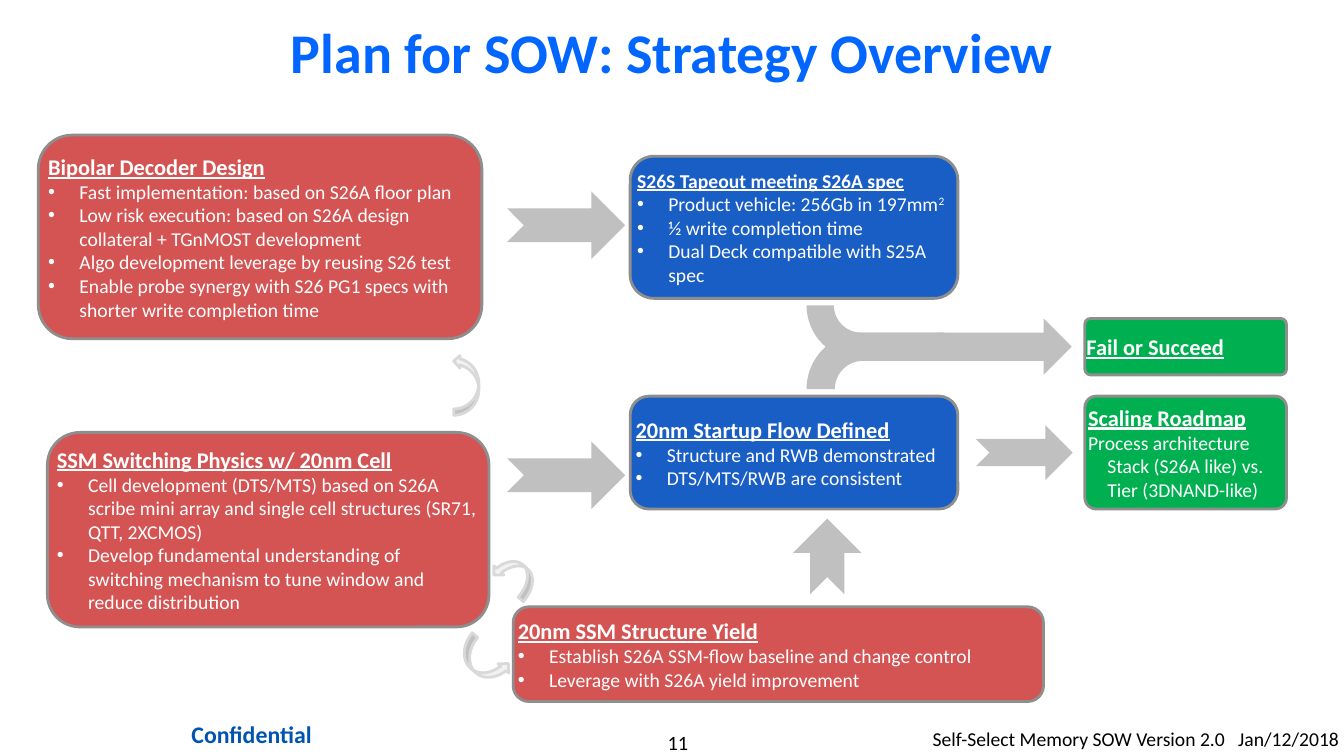
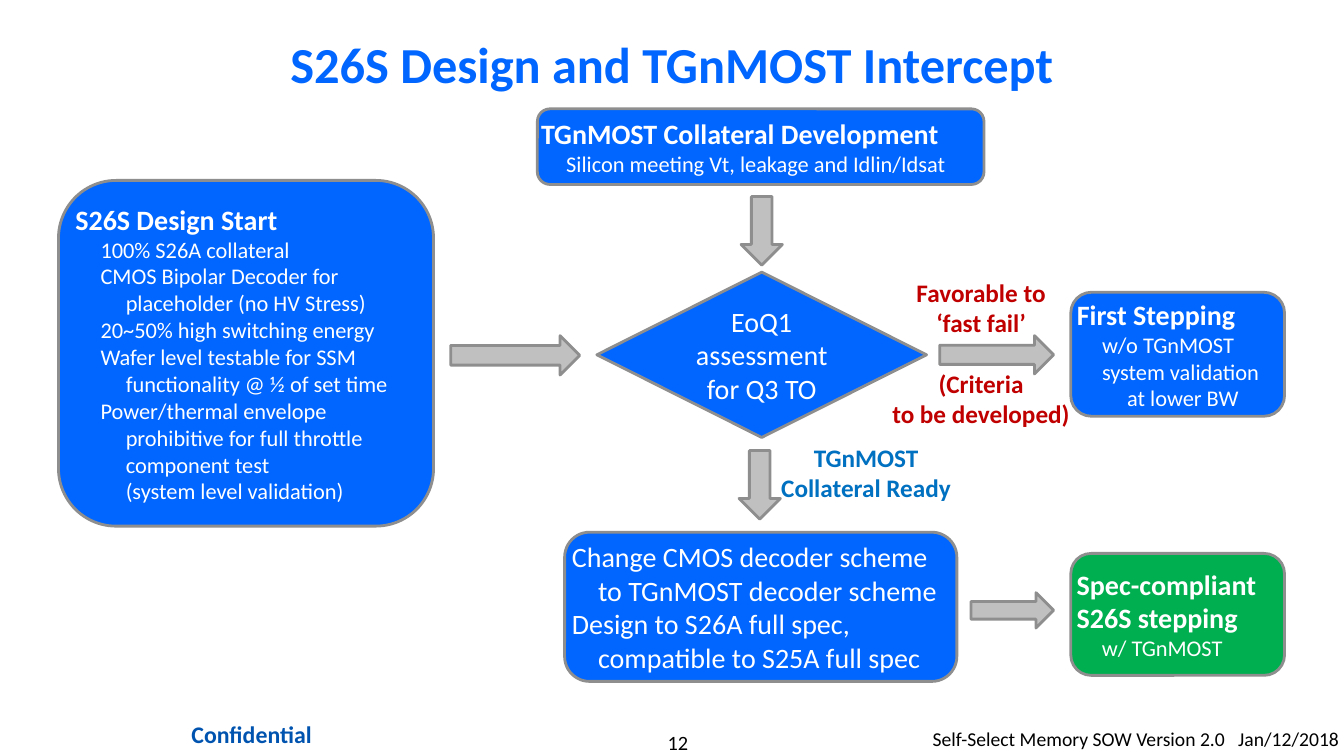
import dataclasses

import lxml.etree
import pptx
import pptx.dml.color
import pptx.enum.shapes
import pptx.enum.text
import pptx.oxml.ns
import pptx.util

Inches = pptx.util.Inches
Pt = pptx.util.Pt
qn = pptx.oxml.ns.qn
SHAPE = pptx.enum.shapes.MSO_SHAPE
ALIGN = pptx.enum.text.PP_ALIGN
ANCHOR = pptx.enum.text.MSO_ANCHOR

FONT = "Calibri"
COLORS = {
    "white": "FFFFFF",
    "black": "000000",
    "title": "0066FF",
    "confidential": "0054B0",
    "red": "C00000",
    "navy": "004DBF",
    "blue": "0066FF",
    "green": "00B050",
    "note": "0070C0",
    "outline": "8E8E8E",
    "arrow": "C0C0C0",
    "loop": "F2F2F2",
    "loop_outline": "D9D9D9",
}
OPACITY = {"red": 67, "navy": 90}
FOOTER = "Self-Select Memory SOW Version 2.0\u00a0\u00a0 Jan/12/2018".replace("\u00a0", " ")


@dataclasses.dataclass
class TextLine:
    text: str
    size: float = 14
    bold: bool = False
    underline: bool = False
    color: str = "white"
    align: object = ALIGN.LEFT
    left: float = 0
    hang: float = 0
    bullet: bool = False
    superscript: str = ""
    before: float = 0


def heading(text, size=16):
    return TextLine(text, size, bold=True, underline=True)


def bullet(text, superscript=""):
    return TextLine(text, left=0.31, hang=0.31, bullet=True, superscript=superscript)


def plain_heading(text):
    return TextLine(text, 20, bold=True)


def detail(text, hang=0.25):
    return TextLine(text, 16, left=0.25 + hang, hang=hang)


def label(text, color, before=0):
    return TextLine(text, 18, bold=True, color=color, align=ALIGN.CENTER, before=before)


def rgb(name):
    return pptx.dml.color.RGBColor.from_string(COLORS[name])


def write_paragraph(paragraph, line):
    paragraph.text = line.text
    paragraph.alignment = line.align
    if line.before:
        paragraph.space_before = Pt(line.before)
    if line.superscript:
        run = paragraph.add_run()
        run.text = line.superscript
        run.font._element.set("baseline", "30000")
    properties = paragraph._p.get_or_add_pPr()
    properties.set("marL", str(Inches(line.left)))
    properties.set("indent", str(-Inches(line.hang)))
    if line.bullet:
        lxml.etree.SubElement(properties, qn("a:buFont")).set("typeface", "Arial")
        lxml.etree.SubElement(properties, qn("a:buChar")).set("char", "•")
    font = paragraph.font
    font.name = FONT
    font.size = Pt(line.size)
    font.bold = line.bold
    font.underline = line.underline
    font.color.rgb = rgb(line.color)


def fill_text(shape, lines, anchor=ANCHOR.MIDDLE, insets=(0, 0), wrap=True):
    frame = shape.text_frame
    frame.word_wrap = wrap
    frame.vertical_anchor = anchor
    frame.margin_left = frame.margin_right = Inches(insets[0])
    frame.margin_top = frame.margin_bottom = Inches(insets[1])
    for index, line in enumerate(lines):
        paragraph = frame.add_paragraph() if index else frame.paragraphs[0]
        write_paragraph(paragraph, line)


def add_text(slide, place, lines, **layout):
    box = slide.shapes.add_textbox(*map(Inches, place))
    fill_text(box, lines, **layout)


def add_figure(slide, kind, place, fill, outline=None, adjustments=(), rotation=0, flip=""):
    shape = slide.shapes.add_shape(kind, *map(Inches, place))
    shape.shadow.inherit = False
    shape.fill.solid()
    shape.fill.fore_color.rgb = rgb(fill)
    if outline:
        shape.line.color.rgb = rgb(outline)
        shape.line.width = Pt(2)
    else:
        shape.line.fill.background()
    for index, value in enumerate(adjustments):
        shape.adjustments[index] = value
    shape.rotation = rotation
    for axis in flip:
        shape.element.spPr.find(qn("a:xfrm")).set("flip" + axis, "1")
    return shape


def add_box(slide, place, fill, lines, kind=SHAPE.ROUNDED_RECTANGLE, insets=(0, 0), adjustments=()):
    box = add_figure(slide, kind, place, fill, "outline", adjustments)
    if fill in OPACITY:
        color = box.element.spPr.find(qn("a:solidFill"))[0]
        lxml.etree.SubElement(color, qn("a:alpha")).set("val", str(OPACITY[fill] * 1000))
    fill_text(box, lines, insets=insets)


def add_slide(presentation, title, title_size, title_height, number):
    slide = presentation.slides.add_slide(presentation.slide_layouts[6])
    add_text(slide, (5.56, 7.24, 2.33, 0.24),
             [TextLine(number, 14.5, color="black", align=ALIGN.CENTER)], anchor=ANCHOR.TOP)
    add_text(slide, (1.55, 7.08, 1.89, 0.41),
             [TextLine("Confidential", 17, bold=True, color="confidential", align=ALIGN.CENTER)],
             anchor=ANCHOR.TOP, insets=(0.12, 0.06))
    add_text(slide, (9.25, 7.16, 4.08, 0.34), [TextLine(FOOTER, color="black")],
             anchor=ANCHOR.TOP, insets=(0, 0.05), wrap=False)
    add_text(slide, (1, 0.17, 11.33, title_height),
             [TextLine(title, title_size, bold=True, color="title", align=ALIGN.CENTER)],
             insets=(0.1, 0.05))
    return slide


def build_strategy(presentation):
    slide = add_slide(presentation, "Plan for SOW: Strategy Overview", 40, 0.67, "11")
    add_box(slide, (0.38, 1.34, 4.4, 2.02), "red", [
        heading("Bipolar Decoder Design"),
        bullet("Fast implementation: based on S26A floor plan"),
        bullet("Low risk execution: based on S26A design collateral + TGnMOST development"),
        bullet("Algo development leverage by reusing S26 test"),
        bullet("Enable probe synergy with S26 PG1 specs with shorter write completion time"),
    ])
    add_box(slide, (0.47, 4.29, 4.38, 1.93), "red", [
        heading("SSM Switching Physics w/ 20nm Cell"),
        bullet("Cell development (DTS/MTS) based on S26A scribe mini array and single cell "
               "structures (SR71, QTT, 2XCMOS)"),
        bullet("Develop fundamental understanding of switching mechanism to tune window and "
               "reduce distribution"),
    ])
    add_box(slide, (5.09, 6.02, 5.26, 0.94), "red", [
        heading("20nm SSM Structure Yield"),
        bullet("Establish S26A SSM-flow baseline and change control"),
        bullet("Leverage with S26A yield improvement"),
    ])
    add_box(slide, (6.25, 3.93, 3.25, 1.12), "navy", [
        heading("20nm Startup Flow Defined"),
        bullet("Structure and RWB demonstrated"),
        bullet("DTS/MTS/RWB are consistent"),
    ])
    add_box(slide, (6.25, 1.55, 3.25, 1.41), "navy", [
        heading("S26S Tapeout meeting S26A spec", 14),
        bullet("Product vehicle: 256Gb in 197mm", superscript="2"),
        bullet("½ write completion time"),
        bullet("Dual Deck compatible with S25A spec"),
    ])
    add_box(slide, (10.76, 3.16, 2, 0.56), "green", [heading("Fail or Succeed")],
            adjustments=[0.1])
    add_box(slide, (10.76, 3.93, 2, 1.12), "green", [
        heading("Scaling Roadmap"),
        TextLine("Process architecture\nStack (S26A like) vs.\nTier (3DNAND-like)",
                 left=0.19, hang=0.19),
    ], adjustments=[0.1])

    for place, rotation in [
        ((5.03, 4.38, 1.17, 0.67), 0),
        ((5.03, 1.9, 1.17, 0.67), 0),
        ((7.83, 5.18, 0.75, 0.68), 270),
        ((9.3, 3.16, 1.33, 0.56), 0),
        ((9.68, 4.22, 0.96, 0.54), 0),
    ]:
        add_figure(slide, SHAPE.NOTCHED_RIGHT_ARROW, place, "arrow", rotation=rotation)
    for place, flip in [((8, 3.3, 1.5, 0.56), ""), ((8, 3.03, 1.5, 0.54), "V")]:
        add_figure(slide, SHAPE.BENT_ARROW, place, "arrow",
                   adjustments=(0.5, 0.25, 0.25, 1), flip=flip)
    for kind, place, rotation, flip in [
        (SHAPE.CURVED_UP_ARROW, (4.53, 6.42, 0.54, 0.28), 40.4, ""),
        (SHAPE.CURVED_UP_ARROW, (4.88, 5.58, 0.46, 0.27), 42.2, "HV"),
        (SHAPE.CURVED_RIGHT_ARROW, (4.5, 3.52, 0.25, 0.6), 0, "HV"),
    ]:
        add_figure(slide, kind, place, "loop", "loop_outline", rotation=rotation, flip=flip)


def build_intercept(presentation):
    slide = add_slide(presentation, "S26S Design and TGnMOST Intercept", 36, 0.92, "12")
    add_box(slide, (0.58, 1.79, 3.72, 3.43), "blue", [
        plain_heading("S26S Design Start"),
        detail("100% S26A collateral"),
        detail("CMOS Bipolar Decoder for placeholder (no HV Stress)"),
        detail("20~50% high switching energy"),
        detail("Wafer level testable for SSM functionality @ ½ of set time"),
        detail("Power/thermal envelope prohibitive for full throttle component test\n"
               "(system level validation)"),
    ])
    add_box(slide, (5.33, 1.08, 4.43, 0.75), "blue", [
        plain_heading("TGnMOST Collateral Development"),
        detail("Silicon meeting Vt, leakage and Idlin/Idsat"),
    ])
    add_box(slide, (5.6, 5.28, 3.89, 1.48), "blue", [
        TextLine(text, 20, left=0.26, hang=0.26) for text in (
            "Change CMOS decoder scheme to TGnMOST decoder scheme",
            "Design to S26A full spec, compatible to S25A full spec",
        )
    ])
    add_box(slide, (5.92, 2.7, 3.27, 1.64), "blue",
            [TextLine("EoQ1 assessment for Q3 TO", 20, align=ALIGN.CENTER)],
            kind=SHAPE.DIAMOND, insets=(0.1, 0.05))
    add_box(slide, (10.62, 2.9, 2.12, 1.23), "blue", [
        plain_heading("First Stepping"),
        detail("w/o TGnMOST"),
        detail("system validation at lower BW"),
    ])
    add_box(slide, (10.62, 5.49, 2.12, 1.21), "green", [
        plain_heading("Spec-compliant S26S stepping"),
        detail("w/ TGnMOST", hang=0),
    ])

    for kind, place in [
        (SHAPE.DOWN_ARROW, (7.35, 1.95, 0.41, 0.68)),
        (SHAPE.DOWN_ARROW, (7.33, 4.47, 0.41, 0.68)),
        (SHAPE.RIGHT_ARROW, (4.47, 3.33, 1.28, 0.39)),
        (SHAPE.RIGHT_ARROW, (9.32, 3.33, 1.13, 0.38)),
        (SHAPE.RIGHT_ARROW, (9.63, 5.88, 0.82, 0.35)),
    ]:
        add_figure(slide, kind, place, "arrow", "outline")

    add_text(slide, (8.72, 2.7, 2.02, 1.62), [
        label("Favorable to", "red"),
        label("‘fast fail’", "red"),
        label("(Criteria\nto be developed)", "red", before=22),
    ], anchor=ANCHOR.TOP, insets=(0.1, 0.05))
    add_text(slide, (7.64, 4.34, 1.9, 0.71), [
        label("TGnMOST", "note"),
        label("Collateral Ready", "note"),
    ], anchor=ANCHOR.TOP, insets=(0.1, 0.05), wrap=False)


def main():
    presentation = pptx.Presentation()
    presentation.slide_width = Inches(13.33)
    presentation.slide_height = Inches(7.5)
    build_strategy(presentation)
    build_intercept(presentation)
    presentation.save("out.pptx")


if __name__ == "__main__":
    main()
